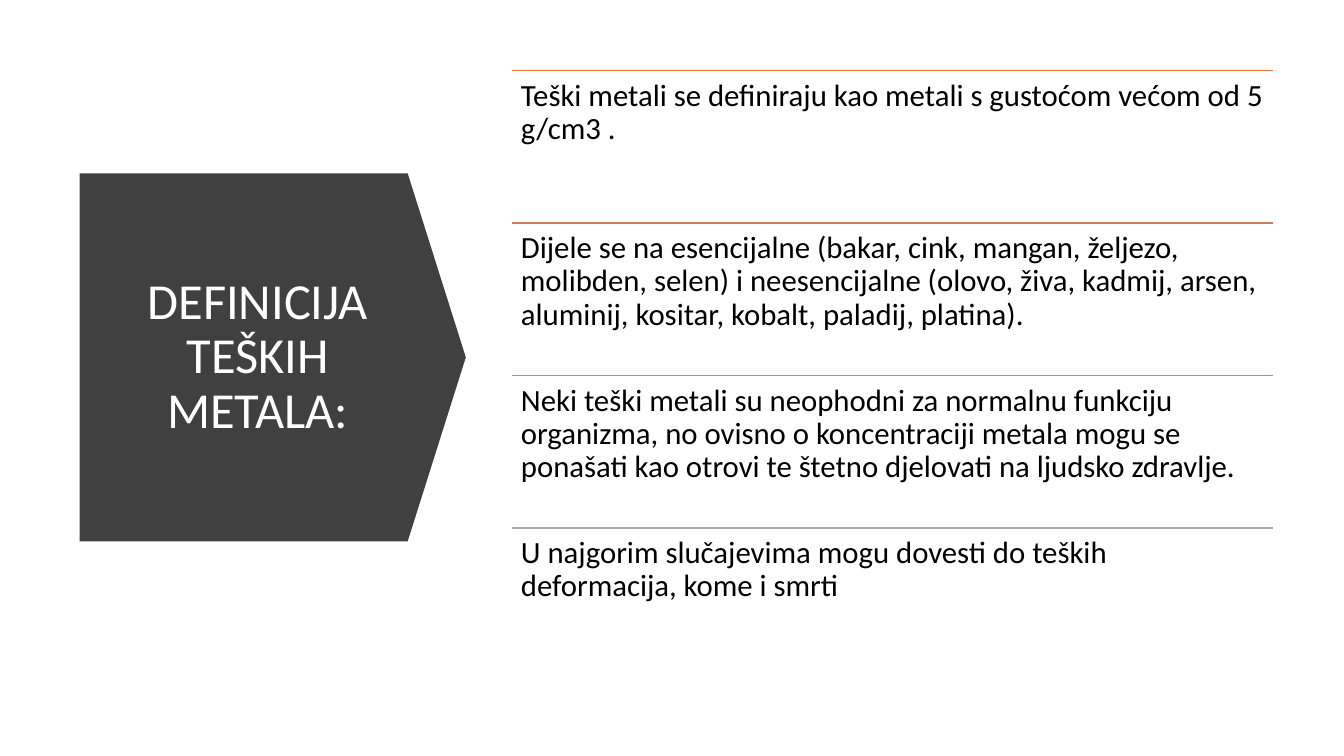
from lxml.etree import SubElement
from pptx import Presentation
from pptx.dml.color import RGBColor
from pptx.enum.shapes import MSO_CONNECTOR as Connector, MSO_SHAPE as Preset
from pptx.enum.text import MSO_ANCHOR as Anchor, MSO_AUTO_SIZE as AutoSize, PP_ALIGN as Align
from pptx.oxml.ns import qn
from pptx.util import Cm, Pt

FONT = "Calibri"
COLORS = {
    "arrow": "404040",
    "title": "FFFFFF",
    "text": "000000",
    "orange": "ED7D31",
    "copper": "D17B5C",
    "rose": "B98A82",
    "gray": "A5A5A5",
}
TITLE = "DEFINICIJA TEŠKIH METALA:"
STATEMENTS = [
    ("orange", "Teški metali se definiraju kao metali s gustoćom većom od 5 g/cm3 ."),
    ("copper", "Dijele se na esencijalne (bakar, cink, mangan, željezo, molibden, selen) "
               "i neesencijalne (olovo, živa, kadmij, arsen, aluminij, kositar, kobalt, "
               "paladij, platina)."),
    ("rose", "Neki teški metali su neophodni za normalnu funkciju organizma, no ovisno o "
             "koncentraciji metala mogu se ponašati kao otrovi te štetno djelovati na "
             "ljudsko zdravlje."),
    ("gray", "U najgorim slučajevima mogu dovesti do teških deformacija, kome i smrti"),
]
LIST_LEFT, LIST_TOP, LIST_WIDTH, ROW_HEIGHT = 12.9, 1.78, 19.18, 3.84


def color(name):
    return RGBColor.from_string(COLORS[name])


def write(text_frame, text, size, color_name, align):
    text_frame.text = text
    text_frame.word_wrap = True
    text_frame.auto_size = AutoSize.NONE
    paragraph = text_frame.paragraphs[0]
    paragraph.alignment = align
    paragraph.line_spacing = 0.9
    font = paragraph.runs[0].font
    font.name = FONT
    font.size = Pt(size)
    font.color.rgb = color(color_name)


def add_arrow(slide):
    arrow = slide.shapes.add_shape(Preset.DOWN_ARROW, Cm(2.24), Cm(4.14), Cm(9.27), Cm(9.73))
    arrow.rotation = 270
    arrow.adjustments[0] = 1
    arrow.adjustments[1] = 0.158
    arrow.shadow.inherit = False
    arrow.fill.solid()
    arrow.fill.fore_color.rgb = color("arrow")
    arrow.line.fill.background()
    return arrow


def place_title(slide, arrow):
    title = slide.shapes.title
    title.left, title.top, title.width, title.height = Cm(2.84), Cm(5.46), Cm(7.32), Cm(7.09)
    write(title.text_frame, TITLE, 36, "title", Align.CENTER)
    title.text_frame.vertical_anchor = Anchor.MIDDLE
    arrow.element.addnext(title.element)


def add_rule(slide, top, color_name):
    rule = slide.shapes.add_connector(
        Connector.STRAIGHT, Cm(LIST_LEFT), Cm(top), Cm(LIST_LEFT + LIST_WIDTH), Cm(top))
    rule.line.color.rgb = color(color_name)
    rule.line.width = Pt(1)
    SubElement(rule.element.spPr, qn("a:effectLst"))


def add_statement(slide, top, text):
    box = slide.shapes.add_textbox(Cm(LIST_LEFT), Cm(top), Cm(LIST_WIDTH), Cm(ROW_HEIGHT))
    text_frame = box.text_frame
    text_frame.margin_left = text_frame.margin_right = Cm(0.23)
    text_frame.margin_top = text_frame.margin_bottom = Cm(0.23)
    write(text_frame, text, 22, "text", Align.LEFT)


def main():
    presentation = Presentation()
    presentation.slide_width = Cm(33.87)
    presentation.slide_height = Cm(19.05)
    slide = presentation.slides.add_slide(presentation.slide_layouts.get_by_name("Title Only"))
    place_title(slide, add_arrow(slide))
    for row, (color_name, text) in enumerate(STATEMENTS):
        top = LIST_TOP + row * ROW_HEIGHT
        add_rule(slide, top, color_name)
        add_statement(slide, top, text)
    presentation.save("out.pptx")


if __name__ == "__main__":
    main()
